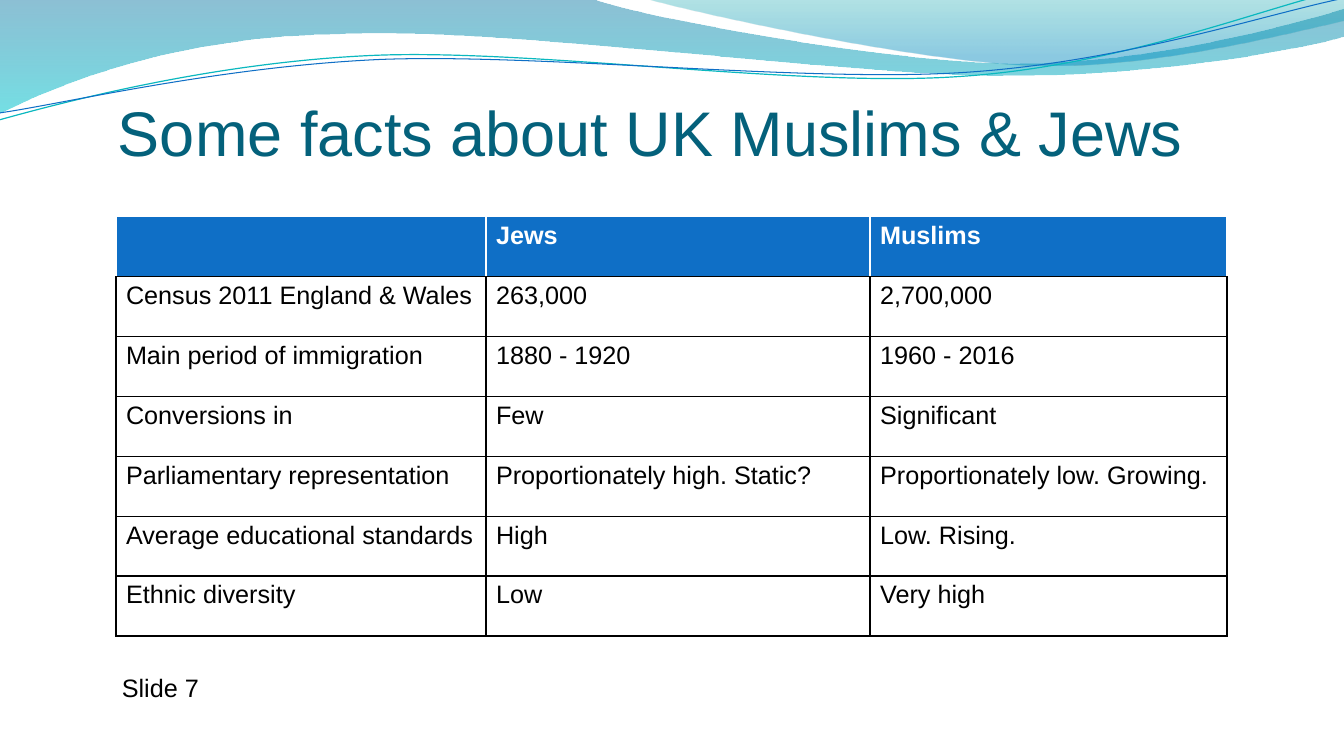
from dataclasses import dataclass

from pptx import Presentation
from pptx.dml.color import RGBColor
from pptx.enum.text import MSO_ANCHOR, MSO_AUTO_SIZE, PP_ALIGN
from pptx.oxml.ns import qn
from pptx.oxml.xmlchemy import OxmlElement
from pptx.util import Emu, Pt

BOTTOM, LEFT = MSO_ANCHOR.BOTTOM, PP_ALIGN.LEFT
NO_FIT, GROW = MSO_AUTO_SIZE.NONE, MSO_AUTO_SIZE.SHAPE_TO_FIT_TEXT
EMU_PER_PX = 9144  # 100 px to the inch
TITLE_ONLY = 5
FONT = "Arial"

COLORS = {
    "title": "04617B", "header": "0F6FC6", "white": "FFFFFF", "black": "000000",
    "deep_blue": "0074A1", "cyan": "00C6CF", "teal": "00A1A9", "sky": "008BBF",
    "teal_line": "0AB8BF", "blue_line": "0F6FC6",
}

Point = tuple[int, int]
Step = tuple[Point, ...]  # one point: straight; three points: Bézier curve


@dataclass(frozen=True)
class Stop:
    position: float
    color: str
    opacity: int


@dataclass(frozen=True)
class Wave:
    start: Point
    steps: tuple[Step, ...]
    stops: tuple[Stop, ...] = ()
    line: str = ""
    width: float = 0


WAVES = (
    Wave((0, 0), (
        ((587, -1),),
        ((634, 17), (885, 63), (1011, 63)),
        ((1138, 63), (1278, 26), (1333, 9)),
        ((1335, 36),),
        ((1311, 44), (1160, 76), (994, 75)),
        ((829, 75), (509, 28), (343, 34)),
        ((172, 36), (61, 83), (-1, 113)),
    ), stops=(Stop(0, "deep_blue", 45), Stop(1, "cyan", 55))),
    Wave((639, -1), (
        ((679, 11), (909, 62), (1025, 65)),
        ((1141, 69), (1282, 32), (1333, 21)),
        ((1333, 0),),
    ), stops=(Stop(0, "teal", 30), Stop(0.8, "sky", 45))),
    Wave((-1, 119), (
        ((64, 101), (211, 62), (369, 55)),
        ((527, 48), (790, 87), (950, 76)),
        ((1110, 66), (1252, 8), (1331, -10)),
    ), line="teal_line", width=0.85),
    Wave((0, 112), (
        ((63, 103), (218, 66), (378, 59)),
        ((537, 53), (796, 82), (955, 72)),
        ((1115, 62), (1255, 14), (1334, -2)),
    ), line="blue_line", width=0.75),
)

COLUMN_WIDTHS = (367, 381, 354)
TABLE_HEIGHT = 416
FACTS = (
    ("", "Jews", "Muslims"),
    ("Census 2011 England & Wales", "263,000", "2,700,000"),
    ("Main period of immigration", "1880 - 1920", "1960 - 2016"),
    ("Conversions in", "Few", "Significant"),
    ("Parliamentary representation", "Proportionately high. Static?",
     "Proportionately low. Growing."),
    ("Average educational standards", "High", "Low. Rising."),
    ("Ethnic diversity", "Low", "Very high"),
)


def px(length: float) -> Emu:
    return Emu(round(length * EMU_PER_PX))


def rgb(name: str) -> RGBColor:
    return RGBColor.from_string(COLORS[name])


def apply(target, **values) -> None:
    for name, value in values.items():
        setattr(target, name, value)


def write(frame, text: str, size: int, color: str, bold: bool = False) -> None:
    paragraph = frame.paragraphs[0]
    paragraph.alignment = LEFT
    if text:
        run = paragraph.add_run()
        run.text = text
        apply(run.font, name=FONT, size=Pt(size), bold=bold)
        run.font.color.rgb = rgb(color)


def bend(shape, steps: tuple[Step, ...]) -> None:
    """Turn the straight segments of each three-point step into one Bézier curve."""
    segments = iter(list(shape._element.iter(qn("a:lnTo"))))
    for step in steps:
        controls = [next(segments) for _ in step]
        if len(controls) == 1:
            continue
        curve = OxmlElement("a:cubicBezTo")
        controls[0].addprevious(curve)
        for control in controls:
            curve.append(control[0])
            control.getparent().remove(control)


def fill_gradient(shape, stops: tuple[Stop, ...]) -> None:
    shape.fill.gradient()
    shape.fill.gradient_angle = 270
    for target, stop in zip(shape.fill.gradient_stops, stops):
        target.position = stop.position
        target.color.rgb = rgb(stop.color)
    gradient = shape._element.spPr.find(qn("a:gradFill"))
    for color, stop in zip(gradient.iter(qn("a:srgbClr")), stops):
        alpha = OxmlElement("a:alpha")
        alpha.set("val", str(stop.opacity * 1000))
        color.append(alpha)


def draw_wave(shapes, wave: Wave) -> None:
    builder = shapes.build_freeform(*wave.start, scale=EMU_PER_PX)
    points = [point for step in wave.steps for point in step]
    builder.add_line_segments(points, close=bool(wave.stops))
    shape = builder.convert_to_shape()
    shape.shadow.inherit = False
    bend(shape, wave.steps)
    if wave.stops:
        fill_gradient(shape, wave.stops)
        shape.line.fill.background()
    else:
        shape.fill.background()
        shape.line.color.rgb = rgb(wave.line)
        shape.line.width = Pt(wave.width)


def set_borders(cell, colors: dict[str, str]) -> None:
    properties = cell._tc.get_or_add_tcPr()
    for index, (side, name) in enumerate(colors.items()):
        line = OxmlElement(f"a:ln{side}")
        line.set("w", str(Pt(1)))
        solid = OxmlElement("a:solidFill")
        color = OxmlElement("a:srgbClr")
        color.set("val", COLORS[name])
        solid.append(color)
        line.append(solid)
        properties.insert(index, line)


def draw_facts(shapes) -> None:
    table = shapes.add_table(len(FACTS), len(COLUMN_WIDTHS), px(115), px(215),
                             px(sum(COLUMN_WIDTHS)), px(TABLE_HEIGHT)).table
    table.horz_banding = False
    for column, width in zip(table.columns, COLUMN_WIDTHS):
        column.width = px(width)
    for row_index, facts in enumerate(FACTS):
        is_header = row_index == 0
        edge = "white" if is_header else "black"
        for column_index, fact in enumerate(facts):
            cell = table.cell(row_index, column_index)
            if is_header:
                cell.fill.solid()
                cell.fill.fore_color.rgb = rgb("header")
            else:
                cell.fill.background()
            set_borders(cell, {"L": edge, "R": edge, "T": edge, "B": "black"})
            write(cell.text_frame, fact, 18, edge, bold=is_header)


def main() -> None:
    presentation = Presentation()
    apply(presentation, slide_width=px(1333), slide_height=px(750))
    slide = presentation.slides.add_slide(presentation.slide_layouts[TITLE_ONLY])
    shapes = slide.shapes
    for wave in WAVES:
        draw_wave(shapes, wave)

    title = shapes.title
    shapes._spTree.append(title._element)  # in front of the waves
    apply(title, left=px(117), top=px(79), width=px(1102), height=px(89))
    apply(title.text_frame, vertical_anchor=BOTTOM, auto_size=NO_FIT, word_wrap=True,
          margin_left=0, margin_top=px(5), margin_right=0, margin_bottom=0)
    write(title.text_frame, "Some facts about UK Muslims & Jews", 45, "title")

    draw_facts(shapes)

    slide_label = shapes.add_textbox(px(111), px(662), px(118), px(40)).text_frame
    apply(slide_label, word_wrap=True, auto_size=GROW)
    write(slide_label, "Slide 7", 18, "black")
    presentation.save("out.pptx")


if __name__ == "__main__":
    main()
